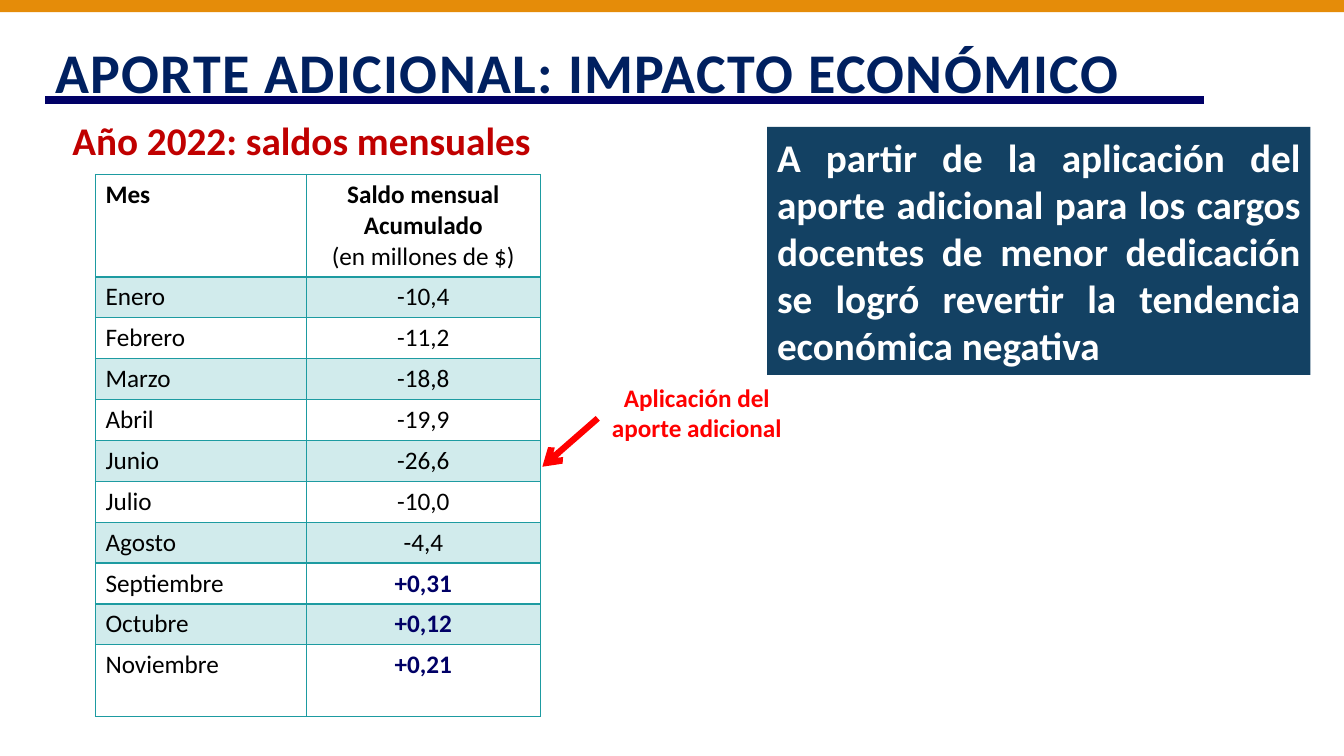
import pptx
import pptx.util
import pptx.dml.color
import pptx.enum.shapes
import pptx.enum.text
import pptx.oxml
import pptx.oxml.ns

Pt = pptx.util.Pt
ALIGN = pptx.enum.text.PP_ALIGN
qn = pptx.oxml.ns.qn

COLORS = {
    "amber": "E58C09", "title": "002060", "navy": "000066", "teal": "1D9BA1",
    "red": "FF0000", "wine": "C00000", "panel": "134163",
    "black": "000000", "white": "FFFFFF",
}
MONTHS = [
    ("Enero", "-10,4"), ("Febrero", "-11,2"), ("Marzo", "-18,8"),
    ("Abril", "-19,9"), ("Junio", "-26,6"), ("Julio", "-10,0"),
    ("Agosto", "-4,4"), ("Septiembre", "+0,31"), ("Octubre", "+0,12"),
    ("Noviembre", "+0,21"),
]


def rgb(name):
    return pptx.dml.color.RGBColor.from_string(COLORS[name])


def sub(parent, tag, **attrs):
    node = parent.makeelement(qn(tag), attrs)
    parent.append(node)
    return node


def write(frame, text, size=18, color="black", bold=False, align=ALIGN.LEFT,
          spacing=None, wrap=True):
    """Fill a text frame, one paragraph per line of text."""
    frame.word_wrap = wrap
    for i, line in enumerate(text.split("\n")):
        para = frame.paragraphs[0] if i == 0 else frame.add_paragraph()
        para.alignment = align
        run = para.add_run()
        run.text = line
        font = run.font
        font.name, font.size, font.bold = "Calibri", Pt(size), bold
        font.color.rgb = rgb(color)
        if spacing:
            font._element.set("spc", str(spacing * 100))


def text_box(slide, box, text, **form):
    frame = slide.shapes.add_textbox(*map(Pt, box)).text_frame
    write(frame, text, **form)
    return frame


def block(slide, box, fill):
    kind = pptx.enum.shapes.MSO_SHAPE.RECTANGLE
    shape = slide.shapes.add_shape(kind, *map(Pt, box))
    shape.shadow.inherit = False
    shape.fill.solid()
    shape.fill.fore_color.rgb = rgb(fill)
    shape.line.fill.background()
    return shape


def rule(slide, ends, color, width, arrow=False):
    kind = pptx.enum.shapes.MSO_CONNECTOR.STRAIGHT
    line = slide.shapes.add_connector(kind, *map(Pt, ends))
    line.line.color.rgb = rgb(color)
    line.line.width = Pt(width)
    if arrow:
        sub(line.line._get_or_add_ln(), "a:tailEnd", type="arrow")
    sub(line._element.spPr, "a:effectLst")


def paint(cell, shaded, base):
    """Set borders first, then the fill, as the schema orders them."""
    props = cell._tc.get_or_add_tcPr()
    for side, width in (("L", 1), ("R", 1), ("T", 1), ("B", base)):
        edge = sub(props, "a:ln" + side, w=str(Pt(width)))
        sub(sub(edge, "a:solidFill"), "a:srgbClr", val=COLORS["teal"])
    if shaded:
        cell.fill.solid()
        cell.fill.fore_color.rgb = rgb("teal")
        tint = props.find(qn("a:solidFill")).find(qn("a:srgbClr"))
        sub(tint, "a:alpha", val="20000")
    else:
        cell.fill.background()


def month_table(slide):
    heights = [73.2] + [29.2] * 9 + [51.4]
    widths = (150.7, 167)
    frame = slide.shapes.add_table(
        len(heights), 2, Pt(68.2), Pt(124.6), Pt(sum(widths)), Pt(sum(heights)))
    table = frame.table
    table.first_row = table.horz_banding = False
    for col, width in zip(table.columns, widths):
        col.width = Pt(width)
    for r, height in enumerate(heights):
        table.rows[r].height = Pt(height)
        for c in range(2):
            paint(table.cell(r, c), r % 2 == 1, 2 if r == 0 else 1)

    # Header
    write(table.cell(0, 0).text_frame, "Mes", bold=True)
    head = table.cell(0, 1).text_frame
    write(head, "Saldo mensual Acumulado\n(en millones de $)",
          bold=True, align=ALIGN.CENTER)
    head.paragraphs[1].runs[0].font.bold = False

    # Months, with positive balances stressed
    for r, (month, value) in enumerate(MONTHS, 1):
        plus = value.startswith("+")
        write(table.cell(r, 0).text_frame, month)
        write(table.cell(r, 1).text_frame, value, bold=plus,
              color="navy" if plus else "black", align=ALIGN.CENTER)


def main():
    deck = pptx.Presentation()
    deck.slide_width, deck.slide_height = Pt(960), Pt(540)
    slide = deck.slides.add_slide(deck.slide_layouts[6])

    # Top band and title
    block(slide, (0, 0, 960, 8.8), "amber")
    title = text_box(slide, (32.4, 21, 912, 55.4),
                     "APORTE ADICIONAL: IMPACTO ECONÓMICO",
                     size=40, color="title", bold=True, spacing=1)
    title.margin_top = Pt(6)
    rule(slide, (32.4, 71.3, 859.7, 71.3), "navy", 6)

    # Monthly balances
    month_table(slide)
    text_box(slide, (44.6, 79.2, 356.4, 41), "Año 2022: saldos mensuales",
             size=28, color="wine", bold=True, wrap=False)

    # Callout pointing at June
    rule(slide, (427, 298.8, 387.4, 333.4), "red", 4.5, arrow=True)
    note = block(slide, (429, 269.3, 137.5, 51), "white")
    write(note.text_frame, "Aplicación del\naporte adicional", color="red",
          bold=True, align=ALIGN.CENTER, wrap=False)

    # Conclusion
    panel = block(slide, (548, 90.7, 388, 177.1), "panel")
    write(panel.text_frame,
          "A partir de la aplicación del aporte adicional para los cargos "
          "docentes de menor dedicación se logró revertir la tendencia "
          "económica negativa",
          size=28, color="white", bold=True, align=ALIGN.JUSTIFY)

    deck.save("out.pptx")


if __name__ == "__main__":
    main()
